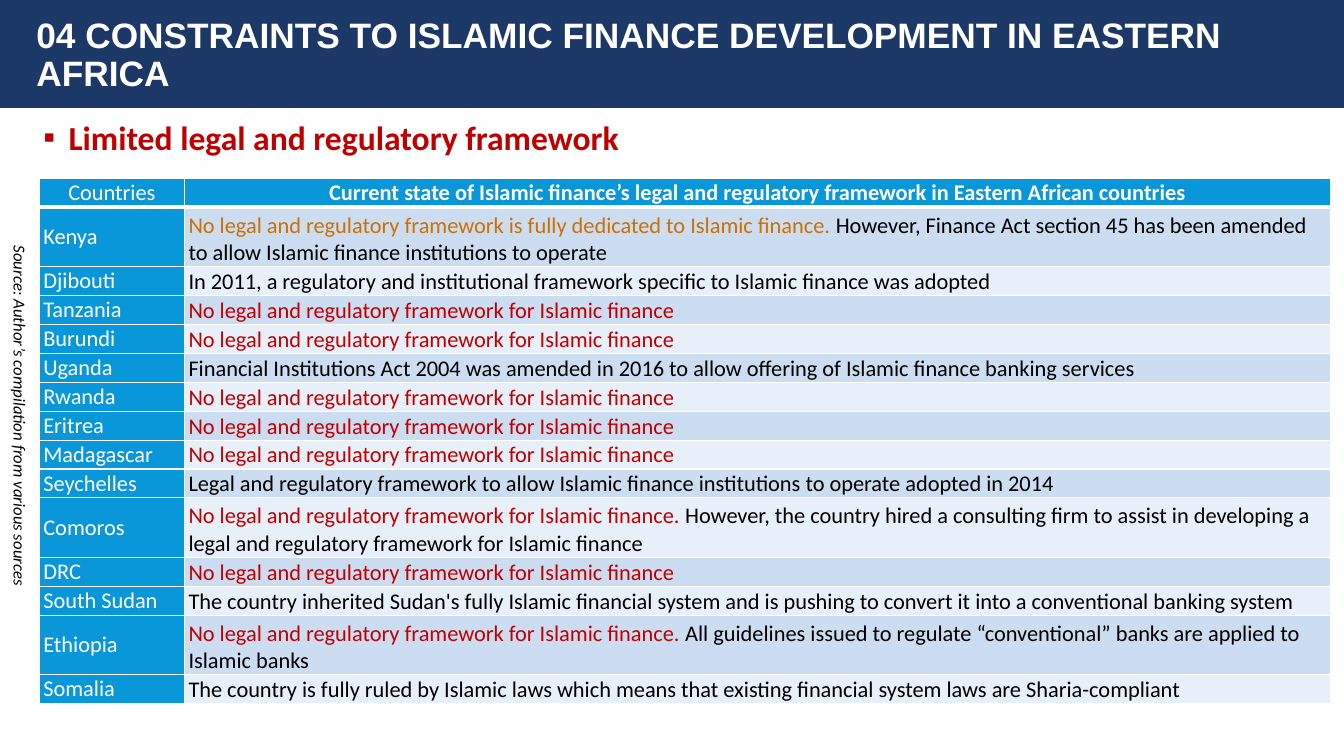
"""Build the slide on legal constraints to Islamic finance in Eastern Africa."""
from pptx import Presentation
from pptx.dml.color import RGBColor
from pptx.enum.shapes import MSO_SHAPE
from pptx.enum.text import MSO_ANCHOR, MSO_AUTO_SIZE, PP_ALIGN
from pptx.oxml import parse_xml
from pptx.oxml.ns import nsdecls
from pptx.util import Inches, Pt

TITLE = "04 CONSTRAINTS TO ISLAMIC FINANCE DEVELOPMENT IN EASTERN AFRICA"
TOPIC = "Limited legal and regulatory framework"
SOURCE = "Source: Author’s compilation from various sources"
HEADERS = [
    ("Countries", False),
    ("Current state of Islamic finance’s legal and regulatory framework in Eastern African countries", True),
]
NONE = ("No legal and regulatory framework for Islamic finance", "red")
NONE_BUT = (NONE[0] + ".", "red")
COUNTRIES = [
    ("Kenya", [("No legal and regulatory framework is fully dedicated to Islamic finance. ", "orange"),
               ("However, Finance Act section 45 has been amended to allow Islamic finance "
                "institutions to operate", "black")]),
    ("Djibouti", [("In 2011, a regulatory and institutional framework specific to Islamic finance "
                   "was adopted", "black")]),
    ("Tanzania", [NONE]),
    ("Burundi", [NONE]),
    ("Uganda", [("Financial Institutions Act 2004 was amended in 2016 to allow offering of Islamic "
                 "finance banking services", "black")]),
    ("Rwanda", [NONE]),
    ("Eritrea", [NONE]),
    ("Madagascar", [NONE]),
    ("Seychelles", [("Legal and regulatory framework to allow Islamic finance institutions to operate "
                     "adopted in 2014", "black")]),
    ("Comoros", [NONE_BUT, (" However, the country hired a consulting firm to assist in developing "
                            "a legal and regulatory framework for Islamic finance", "black")]),
    ("DRC", [NONE]),
    ("South Sudan", [("The country inherited Sudan's fully Islamic financial system and is pushing to "
                      "convert it into a conventional banking system", "black")]),
    ("Ethiopia", [NONE_BUT, (" All guidelines issued to regulate “conventional” banks are applied to "
                             "Islamic banks", "black")]),
    ("Somalia", [("The country is fully ruled by Islamic laws which means that existing financial "
                  "system laws are Sharia-compliant", "black")]),
]
COLORS = {
    "navy": "1C3867", "blue": "0A97D9", "band_dark": "CCDDF1", "band_light": "E7EFF8",
    "red": "C00000", "orange": "CD7000", "black": "000000", "white": "FFFFFF",
}
SLIDE_WIDTH, SLIDE_HEIGHT = 13.33, 7.5
BAND_HEIGHT = 1.07
TABLE_BOX = (0.39, 1.77, 12.81, 5.21)
COUNTRY_WIDTH, TALL_ROW = 1.44, 0.59


def color(name):
    return RGBColor.from_string(COLORS[name])


def add_run(paragraph, text, size, color_name, bold=False, italic=False, font="Calibri"):
    run = paragraph.add_run()
    run.text = text
    run.font.name, run.font.size = font, Pt(size)
    run.font.bold, run.font.italic = bold, italic
    run.font.color.rgb = color(color_name)


def place(shape, left, top, width, height):
    shape.left, shape.top = Inches(left), Inches(top)
    shape.width, shape.height = Inches(width), Inches(height)


def add_borders(cell, bottom):
    properties = cell._tc.get_or_add_tcPr()
    for index, (side, points) in enumerate([("L", 1), ("R", 1), ("T", 1), ("B", bottom)]):
        properties.insert(index, parse_xml(
            f'<a:ln{side} {nsdecls("a")} w="{Pt(points)}"><a:solidFill>'
            f'<a:srgbClr val="{COLORS["white"]}"/></a:solidFill></a:ln{side}>'))


def fill_cell(cell, runs, fill, align, anchor, bottom=1):
    cell.margin_left = cell.margin_right = Inches(0.04)
    cell.margin_top = cell.margin_bottom = 0
    cell.vertical_anchor = anchor
    cell.fill.solid()
    cell.fill.fore_color.rgb = color(fill)
    add_borders(cell, bottom)
    paragraph = cell.text_frame.paragraphs[0]
    paragraph.alignment = align
    for text, color_name, bold in runs:
        add_run(paragraph, text, 16, color_name, bold)


def add_title(slide):
    title = slide.shapes.title
    place(title, 0.26, 0.13, 13.07, 0.85)
    frame = title.text_frame
    frame.auto_size, frame.word_wrap = MSO_AUTO_SIZE.NONE, True
    frame.vertical_anchor = MSO_ANCHOR.MIDDLE
    paragraph = frame.paragraphs[0]
    paragraph.alignment, paragraph.line_spacing = PP_ALIGN.LEFT, 0.9
    add_run(paragraph, TITLE, 25.2, "white", bold=True, font="Arial")
    band = slide.shapes.add_shape(MSO_SHAPE.RECTANGLE, 0, 0, Inches(SLIDE_WIDTH), Inches(BAND_HEIGHT))
    band.shadow.inherit = False
    band.fill.solid()
    band.fill.fore_color.rgb = color("navy")
    band.line.fill.background()
    title._element.addprevious(band._element)


def add_topic(slide):
    body = slide.placeholders[1]
    place(body, 0.1, 1.15, 12.86, 5.83)
    body.text_frame.auto_size = MSO_AUTO_SIZE.NONE
    body.text_frame.vertical_anchor = MSO_ANCHOR.TOP
    paragraph = body.text_frame.paragraphs[0]
    properties = paragraph._p.get_or_add_pPr()
    properties.set("marL", str(Inches(0.48)))
    properties.set("indent", str(Inches(-0.25)))
    properties.append(parse_xml(f'<a:buFont {nsdecls("a")} typeface="Arial"/>'))
    properties.append(parse_xml(f'<a:buChar {nsdecls("a")} char="▪"/>'))
    paragraph.alignment, paragraph.line_spacing = PP_ALIGN.JUSTIFY, 0.9
    paragraph.space_before, paragraph.space_after = 0, Pt(6)
    add_run(paragraph, TOPIC, 24, "red", bold=True)


def add_source(slide):
    box = slide.shapes.add_textbox(0, 0, 0, 0)
    place(box, -1.92, 4.31, 4.24, 0.3)
    box.rotation = 90
    box.text_frame.word_wrap = True
    add_run(box.text_frame.paragraphs[0], SOURCE, 12, "black", italic=True)


def add_country_table(slide):
    frame = slide.shapes.add_table(len(COUNTRIES) + 1, 2, *map(Inches, TABLE_BOX))
    table = frame.table
    table.first_row = table.horz_banding = False
    table.columns[0].width = Inches(COUNTRY_WIDTH)
    table.columns[1].width = Inches(TABLE_BOX[2] - COUNTRY_WIDTH)
    tall = [False] + [len(status) > 1 for _, status in COUNTRIES]
    short_row = (TABLE_BOX[3] - sum(tall) * TALL_ROW) / tall.count(False)
    for row, is_tall in zip(table.rows, tall):
        row.height = Inches(TALL_ROW if is_tall else short_row)
    for column, (text, bold) in enumerate(HEADERS):
        fill_cell(table.cell(0, column), [(text, "white", bold)], "blue",
                  PP_ALIGN.CENTER, MSO_ANCHOR.MIDDLE, bottom=3)
    for row, (country, status) in enumerate(COUNTRIES, start=1):
        fill_cell(table.cell(row, 0), [(country, "white", False)], "blue",
                  PP_ALIGN.LEFT, MSO_ANCHOR.MIDDLE)
        fill_cell(table.cell(row, 1), [(text, name, False) for text, name in status],
                  "band_dark" if row % 2 else "band_light", PP_ALIGN.LEFT, MSO_ANCHOR.BOTTOM)


def main():
    presentation = Presentation()
    presentation.slide_width = Inches(SLIDE_WIDTH)
    presentation.slide_height = Inches(SLIDE_HEIGHT)
    slide = presentation.slides.add_slide(presentation.slide_layouts[1])
    add_title(slide)
    add_source(slide)
    add_topic(slide)
    add_country_table(slide)
    presentation.save("out.pptx")


if __name__ == "__main__":
    main()
